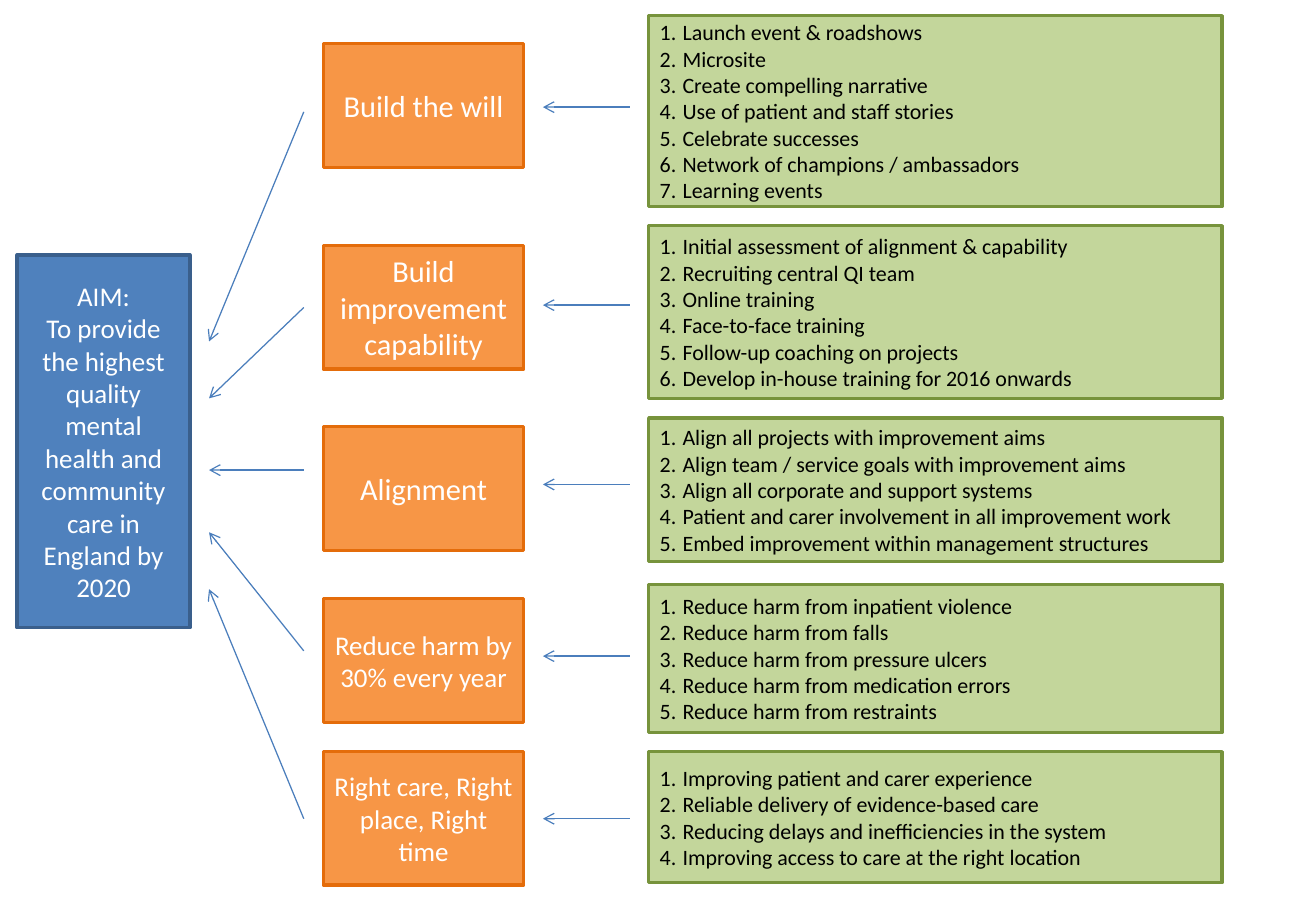
from pptx import Presentation
from pptx.dml.color import RGBColor
from pptx.enum.shapes import MSO_CONNECTOR as Link, MSO_SHAPE as Form
from pptx.enum.text import MSO_ANCHOR as Anchor, PP_ALIGN as Align
from pptx.oxml.ns import qn
from pptx.util import Cm, Pt
from lxml.etree import SubElement

AIM = ["AIM:", "To provide the highest quality mental health and "
       "community care in England by 2020"]

# driver, size, (top, height), (list top, height), link y, aim link (from y, to y), actions
ROWS = [
    ("Build the will", 18, (0.91, 2.59), (0.33, 3.99), 2.24, (2.34, 7.14),
     ["Launch event & roadshows", "Microsite", "Create compelling narrative",
      "Use of patient and staff stories", "Celebrate successes",
      "Network of champions / ambassadors", "Learning events"]),
    ("Build improvement capability", 18, (5.13, 2.59), (4.72, 3.61), 6.38, (6.43, 8.33),
     ["Initial assessment of alignment & capability",
      "Recruiting central QI team", "Online training",
      "Face-to-face training", "Follow-up coaching on projects",
      "Develop in-house training for 2016 onwards"]),
    ("Alignment", 18, (8.92, 2.59), (8.74, 3), 10.13, (9.83, 9.83),
     ["Align all projects with improvement aims",
      "Align team / service goals with improvement aims",
      "Align all corporate and support systems",
      "Patient and carer involvement in all improvement work",
      "Embed improvement within management structures"]),
    ("Reduce harm by 30% every year", 16, (12.52, 2.59), (12.22, 3.1), 13.72, (13.61, 11.13),
     ["Reduce harm from inpatient violence", "Reduce harm from falls",
      "Reduce harm from pressure ulcers",
      "Reduce harm from medication errors", "Reduce harm from restraints"]),
    ("Right care, Right place, Right time", 16, (15.72, 2.79), (15.72, 2.74), 17.12,
     (17.12, 12.32),
     ["Improving patient and carer experience",
      "Reliable delivery of evidence-based care",
      "Reducing delays and inefficiencies in the system",
      "Improving access to care at the right location"]),
]


def tint(code):
    return RGBColor.from_string(code)


def write(frame, lines, size=16, color="FFFFFF", align=Align.CENTER, number=False):
    for i, line in enumerate(lines):
        para = frame.paragraphs[0] if i == 0 else frame.add_paragraph()
        para.alignment = align
        run = para.add_run()
        run.text = line
        run.font.name = "Calibri"
        run.font.size = Pt(size)
        run.font.color.rgb = tint(color)
        if number:
            props = para._p.get_or_add_pPr()
            props.set("marL", str(Cm(0.48)))
            props.set("indent", str(-Cm(0.48)))
            SubElement(props, qn("a:buFont"), typeface="+mj-lt")
            SubElement(props, qn("a:buAutoNum"), type="arabicPeriod")


class Chart:
    """Driver diagram: the current slide and its style."""
    blue = ("4F81BD", "3A5F8C")
    orange = ("F79646", "E46C0A")
    green = ("C3D69B", "77933C")
    ink = "4B7EBC"

    def __init__(self, deck):
        self.slide = deck.slides.add_slide(deck.slide_layouts[6])

    def box(self, left, top, width, height, colors, lines, **style):
        shape = self.slide.shapes.add_shape(
            Form.RECTANGLE, Cm(left), Cm(top), Cm(width), Cm(height))
        shape.shadow.inherit = False
        fill, edge = colors
        shape.fill.solid()
        shape.fill.fore_color.rgb = tint(fill)
        shape.line.color.rgb = tint(edge)
        shape.line.width = Pt(2)
        frame = shape.text_frame
        frame.word_wrap = True
        frame.vertical_anchor = Anchor.MIDDLE
        frame.margin_left = frame.margin_right = Cm(0.23)
        frame.margin_top = frame.margin_bottom = Cm(0.12)
        write(frame, lines, **style)

    def arrow(self, x1, y1, x2, y2):
        link = self.slide.shapes.add_connector(
            Link.STRAIGHT, Cm(x1), Cm(y1), Cm(x2), Cm(y2))
        link.line.color.rgb = tint(self.ink)
        link.line.width = Pt(0.75)
        SubElement(link.line._get_or_add_ln(), qn("a:tailEnd"), type="arrow")
        SubElement(link._element.spPr, qn("a:effectLst"))


def main():
    deck = Presentation()
    deck.slide_width, deck.slide_height = Cm(27.51), Cm(19.05)
    chart = Chart(deck)
    chart.box(0.36, 5.33, 3.61, 7.8, chart.blue, AIM)
    for driver, size, spot, area, mid, (start, end), acts in ROWS:
        chart.box(6.76, spot[0], 4.19, spot[1], chart.orange, [driver], size=size)
        chart.box(13.56, area[0], 11.99, area[1], chart.green, acts,
                  size=13, color="000000", align=Align.LEFT, number=True)
        chart.arrow(6.35, start, 4.37, end)
        chart.arrow(13.16, mid, 11.35, mid)
    deck.save("out.pptx")


if __name__ == "__main__":
    main()
